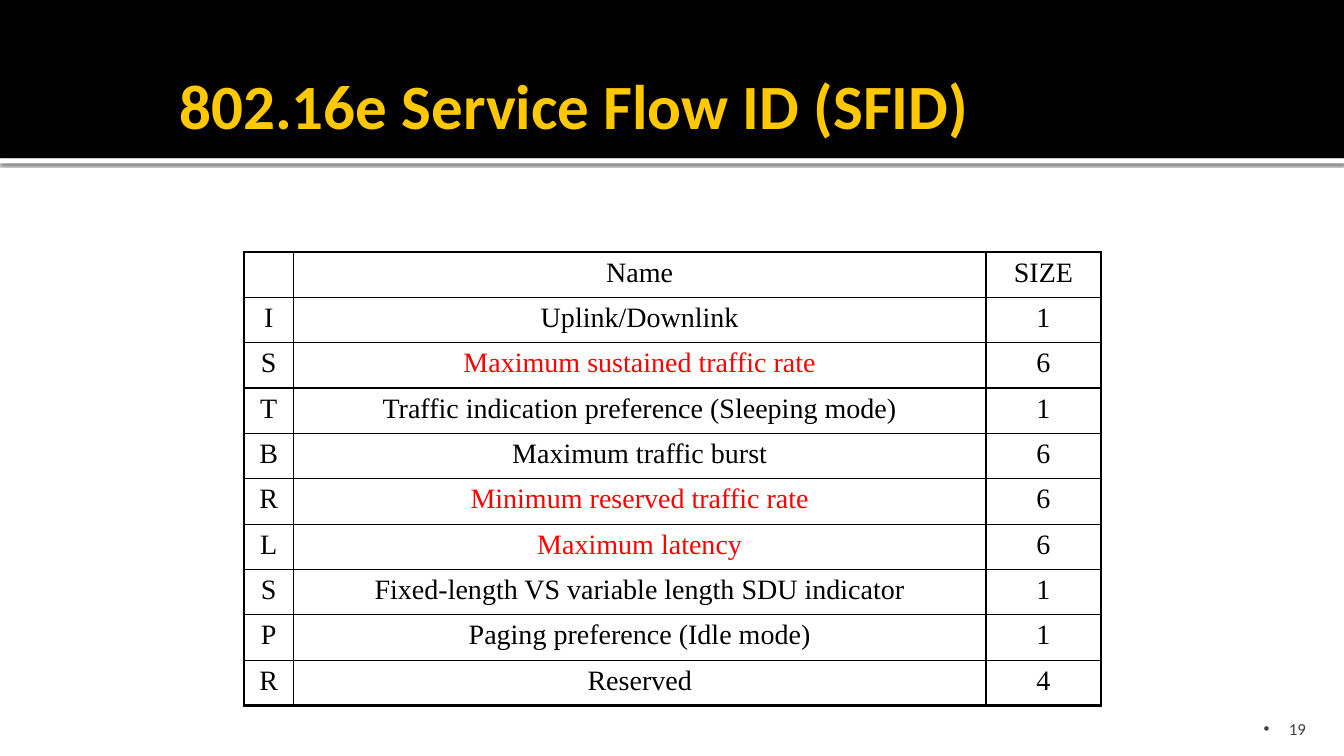
"""Build the 802.16e service flow ID slide."""
from dataclasses import dataclass

from lxml.etree import SubElement
from pptx import Presentation
from pptx.dml.color import RGBColor
from pptx.enum.shapes import MSO_SHAPE
from pptx.enum.text import MSO_ANCHOR, MSO_AUTO_SIZE, PP_ALIGN
from pptx.oxml import parse_xml
from pptx.oxml.ns import nsdecls, qn
from pptx.shapes.autoshape import Shape
from pptx.slide import Slide
from pptx.table import _Cell
from pptx.text.text import TextFrame, _Paragraph
from pptx.util import Emu, Pt

PX = 9144


@dataclass(frozen=True)
class Theme:
    white: str = "FFFFFF"
    black: str = "000000"
    gold: str = "FFC800"
    red: str = "FF0000"
    grey: str = "3F3F3F"
    heading_font: str = "Calibri"
    table_font: str = "Times New Roman"
    title_size: int = 45
    table_size: int = 20
    number_size: int = 12
    thin: float = 1
    thick: float = 2.25


@dataclass(frozen=True)
class Box:
    left: int
    top: int
    width: int
    height: int

    def emu(self) -> tuple[Emu, Emu, Emu, Emu]:
        return px(self.left), px(self.top), px(self.width), px(self.height)


@dataclass(frozen=True)
class Bar:
    box: Box
    color: str
    shadow: bool = False


@dataclass(frozen=True)
class Field:
    letter: str
    name: str
    size: str
    color: str


THEME = Theme()
BARS = [
    Bar(Box(0, 157, 1333, 5), THEME.white, shadow=True),
    Bar(Box(0, 0, 1333, 157), THEME.black),
]
FIELDS = [
    Field("", "Name", "SIZE", THEME.black),
    Field("I", "Uplink/Downlink", "1", THEME.black),
    Field("S", "Maximum sustained traffic rate", "6", THEME.red),
    Field("T", "Traffic indication preference (Sleeping mode)", "1", THEME.black),
    Field("B", "Maximum traffic burst", "6", THEME.black),
    Field("R", "Minimum reserved traffic rate", "6", THEME.red),
    Field("L", "Maximum latency", "6", THEME.red),
    Field("S", "Fixed-length VS variable length SDU indicator", "1", THEME.black),
    Field("P", "Paging preference (Idle mode)", "1", THEME.black),
    Field("R", "Reserved", "4", THEME.black),
]
COLUMNS = [49, 687, 114]
ROW_HEIGHT = 45


def px(n: int) -> Emu:
    return Emu(n * PX)


def add_run(p: _Paragraph, text: str, font: str, size: int, color: str, bold: bool = False) -> None:
    r = p.add_run()
    r.text = text
    r.font.name = font
    r.font.size = Pt(size)
    r.font.bold = bold
    r.font.color.rgb = RGBColor.from_string(color)


def set_frame(tf: TextFrame, anchor: MSO_ANCHOR, right: int, bottom: int) -> None:
    tf.word_wrap = True
    tf.auto_size = MSO_AUTO_SIZE.NONE
    tf.vertical_anchor = anchor
    tf.margin_left, tf.margin_top = px(10), px(5)
    tf.margin_right, tf.margin_bottom = px(right), px(bottom)


def add_bar(s: Slide, bar: Bar) -> Shape:
    sp = s.shapes.add_shape(MSO_SHAPE.RECTANGLE, *bar.box.emu())
    sp.fill.solid()
    sp.fill.fore_color.rgb = RGBColor.from_string(bar.color)
    sp.line.fill.background()
    sp.shadow.inherit = False
    if bar.shadow:
        effects = sp.element.spPr.find(qn("a:effectLst"))
        effects.append(parse_xml(
            f'<a:outerShdw {nsdecls("a")} blurRad="{Pt(2.5)}" dist="{Pt(0.8)}" dir="5400000" '
            f'algn="tl" rotWithShape="0"><a:srgbClr val="{THEME.black}">'
            '<a:alpha val="60000"/></a:srgbClr></a:outerShdw>'))
    return sp


def add_title(s: Slide, box: Box, text: str) -> None:
    sp = s.shapes.title
    sp.left, sp.top, sp.width, sp.height = box.emu()
    tf = sp.text_frame
    set_frame(tf, MSO_ANCHOR.MIDDLE, 5, 5)
    p = tf.paragraphs[0]
    p.alignment = PP_ALIGN.LEFT
    add_run(p, text, THEME.heading_font, THEME.title_size, THEME.gold, bold=True)


def add_number(s: Slide, box: Box, text: str) -> None:
    tf = s.shapes.add_textbox(*box.emu()).text_frame
    set_frame(tf, MSO_ANCHOR.BOTTOM, 10, 0)
    p = tf.paragraphs[0]
    p.alignment = PP_ALIGN.RIGHT
    p.space_before = p.space_after = Pt(10)
    add_run(p, text, THEME.heading_font, THEME.number_size, THEME.grey)
    props = p._p.get_or_add_pPr()
    props.set("marL", str(px(25)))
    props.set("indent", str(-px(25)))
    SubElement(props, qn("a:buFont"), typeface="Arial")
    SubElement(props, qn("a:buChar"), char="•")


def set_borders(cell: _Cell, outer: dict[str, bool]) -> None:
    props = cell._tc.get_or_add_tcPr()
    for i, (side, is_outer) in enumerate(outer.items()):
        width = Pt(THEME.thick if is_outer else THEME.thin)
        props.insert(i, parse_xml(
            f'<a:ln{side} {nsdecls("a")} w="{width}"><a:solidFill>'
            f'<a:srgbClr val="{THEME.black}"/></a:solidFill></a:ln{side}>'))


def add_cell_text(cell: _Cell, text: str, color: str) -> None:
    p = cell.text_frame.paragraphs[0]
    p.alignment = PP_ALIGN.CENTER
    before = SubElement(p._p.get_or_add_pPr(), qn("a:spcBef"))
    SubElement(before, qn("a:spcPct"), val="20000")
    add_run(p, text, THEME.table_font, THEME.table_size, color)


def add_fields(s: Slide, left: int, top: int) -> None:
    rows, cols = len(FIELDS), len(COLUMNS)
    box = Box(left, top, sum(COLUMNS), ROW_HEIGHT * rows)
    table = s.shapes.add_table(rows, cols, *box.emu()).table
    table.first_row = table.horz_banding = False
    for column, width in zip(table.columns, COLUMNS):
        column.width = px(width)
    for i, field in enumerate(FIELDS):
        table.rows[i].height = px(ROW_HEIGHT)
        texts = [(field.letter, THEME.black), (field.name, field.color), (field.size, THEME.black)]
        for j, (text, color) in enumerate(texts):
            cell = table.cell(i, j)
            cell.fill.background()
            set_borders(cell, {"L": j == 0, "R": j == cols - 1, "T": i == 0, "B": i == rows - 1})
            if text:
                add_cell_text(cell, text, color)


def main() -> None:
    prs = Presentation()
    prs.slide_width, prs.slide_height = px(1333), px(750)
    s = prs.slides.add_slide(prs.slide_layouts[5])
    for bar in BARS:
        s.shapes.title.element.addprevious(add_bar(s, bar).element)
    add_number(s, Box(1027, 683, 278, 50), "19")
    add_title(s, Box(168, 23, 1136, 160), "802.16e Service Flow ID (SFID)")
    add_fields(s, 242, 250)
    prs.save("out.pptx")


if __name__ == "__main__":
    main()
